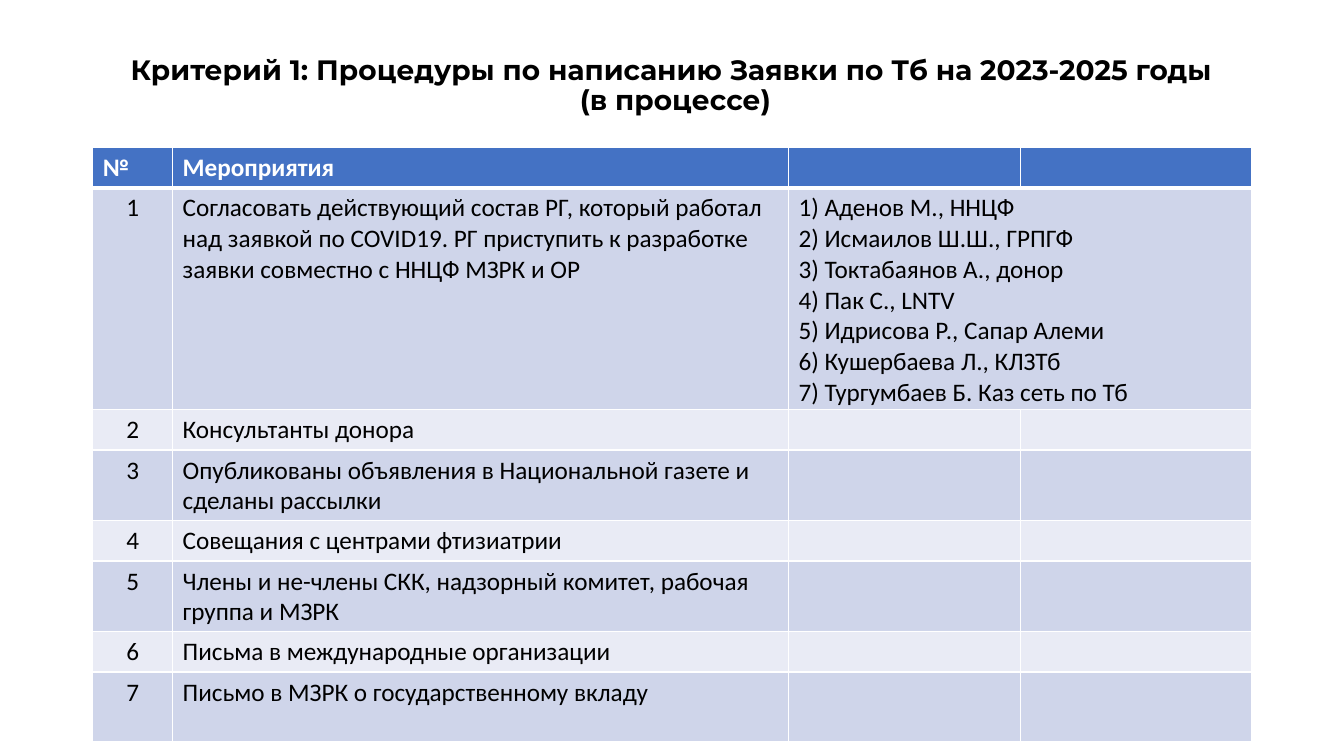
from lxml import etree
from pptx import Presentation
from pptx.dml.color import RGBColor
from pptx.enum.text import MSO_ANCHOR, PP_ALIGN
from pptx.oxml.ns import qn
from pptx.util import Cm, Pt

CENTER, LEFT = PP_ALIGN.CENTER, PP_ALIGN.LEFT
MIDDLE = MSO_ANCHOR.MIDDLE
BLACK, WHITE = "000000", "FFFFFF"
HEADER_FILL, BAND_FILLS = "4472C4", ("CFD5EA", "E9EBF5")

TITLE_BOX = (1.35, 1.02, 31.34, 2.31)
TABLE_BOX = (2.34, 3.71, 29.21, 14.99)
COLUMN_WIDTHS = (2.01, 15.52, 5.84, 5.84)
ROW_HEIGHTS = (1.02, 5.26, 1.02, 1.04, 1.02, 1.75, 0.97, 1.75)

TITLE_LINES = (
    "Критерий 1: Процедуры по написанию Заявки по Тб на 2023-2025 годы ",
    "(в процессе)",
)
ACTIVITIES = (
    "Согласовать действующий состав РГ, который работал над заявкой по COVID19. "
    "РГ приступить к разработке заявки совместно с ННЦФ МЗРК и ОР",
    "Консультанты донора",
    "Опубликованы объявления в Национальной газете и сделаны рассылки",
    "Совещания с центрами фтизиатрии",
    "Члены и не-члены СКК, надзорный комитет, рабочая группа и МЗРК",
    "Письма в международные организации",
    "Письмо в МЗРК о государственному вкладу",
)
MEMBERS = (
    "Аденов М., ННЦФ",
    "Исмаилов Ш.Ш., ГРПГФ",
    "Токтабаянов А., донор",
    "Пак С., LNTV",
    "Идрисова Р., Сапар Алеми",
    "Кушербаева Л., КЛЗТб",
    "Тургумбаев Б. Каз сеть по Тб",
)


def colour(hex_text):
    return RGBColor.from_string(hex_text)


def add_span(para, text, font, size, hex_text, bold):
    span = para.add_run()
    span.text = text
    span.font.name = font
    span.font.size = Pt(size)
    span.font.bold = bold
    span.font.color.rgb = colour(hex_text)


def write_cell(cell, lines, hex_text=BLACK, bold=False, align=LEFT):
    frame = cell.text_frame
    for index, line in enumerate(lines):
        para = frame.add_paragraph() if index else frame.paragraphs[0]
        para.alignment = align
        add_span(para, line, "Calibri", 18, hex_text, bold)


def set_borders(cell, top, bottom):
    properties = cell._tc.get_or_add_tcPr()
    for side, width in (("L", 1), ("R", 1), ("T", top), ("B", bottom)):
        line = etree.SubElement(properties, qn(f"a:ln{side}"), w=str(Pt(width)))
        fill = etree.SubElement(line, qn("a:solidFill"))
        etree.SubElement(fill, qn("a:srgbClr"), val=WHITE)


def style_grid(table):
    for row_index, row in enumerate(table.rows):
        row.height = Cm(ROW_HEIGHTS[row_index])
        fill = BAND_FILLS[(row_index - 1) % 2] if row_index else HEADER_FILL
        for cell in row.cells:
            set_borders(cell, 3 if row_index == 1 else 1, 1 if row_index else 3)
            cell.fill.solid()
            cell.fill.fore_color.rgb = colour(fill)


def add_title(page, box):
    title = page.shapes.add_textbox(*map(Cm, box))
    frame = title.text_frame
    frame.word_wrap = True
    frame.vertical_anchor = MIDDLE
    para = frame.paragraphs[0]
    para.alignment = CENTER
    para.line_spacing = 0.9
    for index, line in enumerate(TITLE_LINES):
        if index:
            para.add_line_break()
        add_span(para, line, "Montserrat", 20, BLACK, True)


def add_activities(page, box):
    size = (len(ROW_HEIGHTS), len(COLUMN_WIDTHS))
    table = page.shapes.add_table(*size, *map(Cm, box)).table
    for column, width in zip(table.columns, COLUMN_WIDTHS):
        column.width = Cm(width)
    style_grid(table)
    for index, heading in enumerate(("№", "Мероприятия")):
        write_cell(table.cell(0, index), [heading], WHITE, True)
    for number, activity in enumerate(ACTIVITIES, 1):
        write_cell(table.cell(number, 0), [str(number)], align=CENTER)
        write_cell(table.cell(number, 1), [activity])
    members_cell = table.cell(1, 2)
    members_cell.merge(table.cell(1, 3))
    write_cell(members_cell, [f"{n}) {name}" for n, name in enumerate(MEMBERS, 1)])


def main():
    deck = Presentation()
    deck.slide_width, deck.slide_height = Cm(33.87), Cm(19.05)
    page = deck.slides.add_slide(deck.slide_layouts[6])
    add_title(page, TITLE_BOX)
    add_activities(page, TABLE_BOX)
    deck.save("out.pptx")


if __name__ == "__main__":
    main()
